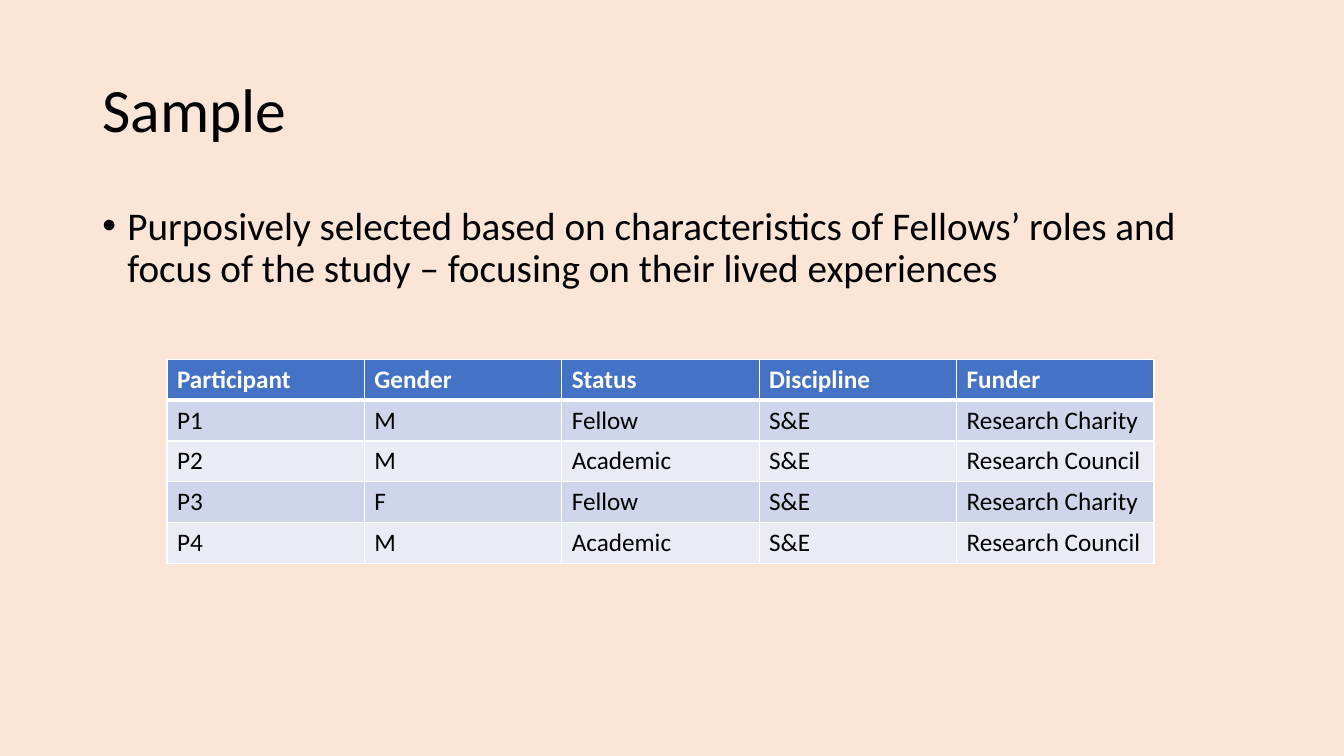
from lxml import etree
from pptx import Presentation
from pptx.dml.color import RGBColor
from pptx.enum.text import MSO_ANCHOR
from pptx.oxml.ns import qn
from pptx.util import Pt

MIDDLE = MSO_ANCHOR.MIDDLE
TOP = MSO_ANCHOR.TOP
EMU_PER_PX = 9525
FONT = "Calibri"
COLORS = {
    "background": "FBE5D6",
    "text": "000000",
    "header": "4472C4",
    "header_text": "FFFFFF",
    "odd_row": "CFD5EA",
    "even_row": "E9EBF5",
    "border": "FFFFFF",
}
SAMPLE = [
    ("Participant", "Gender", "Status", "Discipline", "Funder"),
    ("P1", "M", "Fellow", "S&E", "Research Charity"),
    ("P2", "M", "Academic", "S&E", "Research Council"),
    ("P3", "F", "Fellow", "S&E", "Research Charity"),
    ("P4", "M", "Academic", "S&E", "Research Council"),
]


def px(length):
    """Turn a length in px into EMU."""
    return length * EMU_PER_PX


def color(name):
    """Look up a named colour."""
    return RGBColor.from_string(COLORS[name])


def write(frame, text, size, fill="text", bold=False, spacing=None, before=0):
    """Write one formatted paragraph into a text frame and return it."""
    paragraph = frame.paragraphs[0]
    paragraph.line_spacing = spacing
    paragraph.space_before = Pt(before)
    run = paragraph.add_run()
    run.text = text
    run.font.name = FONT
    run.font.size = Pt(size)
    run.font.bold = bold
    run.font.color.rgb = color(fill)
    return paragraph


def add_text(slide, box, text, anchor=TOP, **style):
    """Add a wrapping text box and return its paragraph."""
    frame = slide.shapes.add_textbox(*map(px, box)).text_frame
    frame.word_wrap = True
    frame.vertical_anchor = anchor
    return write(frame, text, **style)


def add_bullet(paragraph, indent):
    """Give a paragraph a round bullet with a hanging indent."""
    properties = paragraph._p.get_or_add_pPr()
    properties.set("marL", str(px(indent)))
    properties.set("indent", str(-px(indent)))
    etree.SubElement(properties, qn("a:buFont")).set("typeface", "Arial")
    etree.SubElement(properties, qn("a:buChar")).set("char", "•")


def add_borders(cell, **widths):
    """Draw the cell borders, keyed by side, with widths in points."""
    properties = cell._tc.get_or_add_tcPr()
    for side, width in widths.items():
        line = etree.SubElement(properties, qn(f"a:ln{side}"), w=str(Pt(width)))
        fill = etree.SubElement(line, qn("a:solidFill"))
        etree.SubElement(fill, qn("a:srgbClr"), val=COLORS["border"])


def fill_cell(cell, text, row):
    """Write, border and fill a cell according to its row."""
    header = row == 0
    write(cell.text_frame, text, size=18, bold=header,
          fill="header_text" if header else "text")
    add_borders(cell, L=1, R=1, T=3 if row == 1 else 1, B=3 if header else 1)
    band = "header" if header else "odd_row" if row % 2 else "even_row"
    cell.fill.solid()
    cell.fill.fore_color.rgb = color(band)


def add_sample_table(slide, left, top, column_width, row_height):
    """Add the table of participants."""
    rows, columns = len(SAMPLE), len(SAMPLE[0])
    table = slide.shapes.add_table(
        rows, columns, px(left), px(top),
        px(column_width * columns), px(row_height * rows)).table
    for row, values in enumerate(SAMPLE):
        for column, text in enumerate(values):
            fill_cell(table.cell(row, column), text, row)


def main():
    """Build and save the slide."""
    deck = Presentation()
    deck.slide_width, deck.slide_height = px(1280), px(720)
    slide = deck.slides.add_slide(deck.slide_layouts[6])
    slide.background.fill.solid()
    slide.background.fill.fore_color.rgb = color("background")
    add_text(slide, (88, 38, 1104, 139), "Sample",
             anchor=MIDDLE, size=44, spacing=0.9)
    selection = add_text(
        slide, (88, 192, 1104, 457),
        "Purposively selected based on characteristics of Fellows’ roles and "
        "focus of the study – focusing on their lived experiences",
        size=28, spacing=0.9, before=10)
    add_bullet(selection, 24)
    add_sample_table(slide, 159, 342, column_width=188, row_height=39)
    deck.save("out.pptx")


if __name__ == "__main__":
    main()
